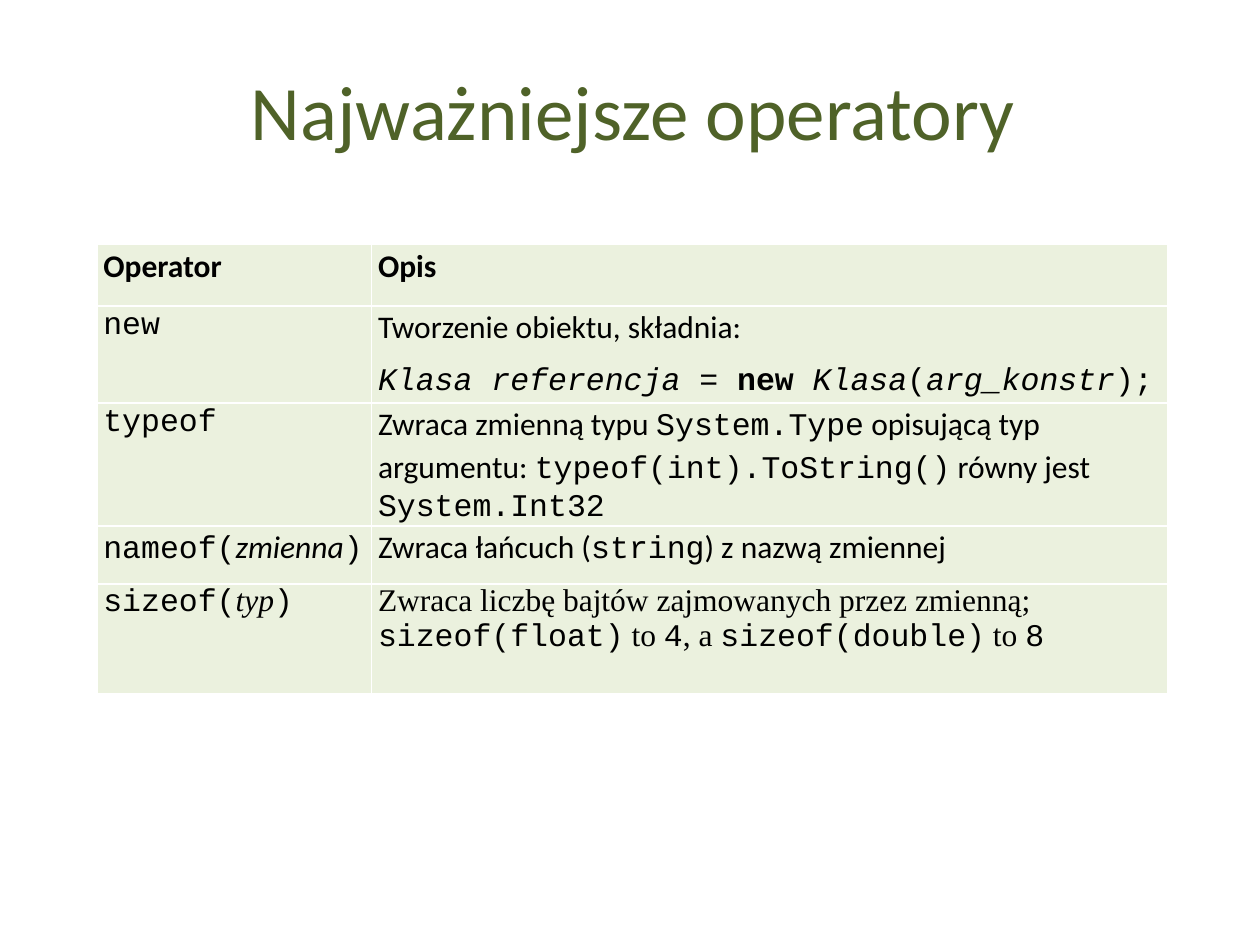
from dataclasses import dataclass

from lxml import etree
from pptx import Presentation
from pptx.dml.color import RGBColor
from pptx.enum import text
from pptx.oxml.ns import qn
from pptx.util import Inches, Pt


@dataclass(frozen=True)
class Theme:
    title: str = "4F6228"
    ink: str = "000000"
    cell: str = "EBF1DE"
    border: str = "FFFFFF"
    title_size: int = 44
    body_size: int = 18
    border_width: int = 1
    prose: str = "Calibri"
    code: str = "Courier New"
    serif: str = "Times New Roman"


THEME = Theme()
COLUMN_WIDTHS = (2.18, 6.32)
ROW_HEIGHTS = (0.49, 0.77, 0.97, 0.46, 0.87)


def prose(content, **style):
    return content, THEME.prose, style


def code(content, **style):
    return content, THEME.code, style


def serif(content, **style):
    return content, THEME.serif, style


# Rows hold cells, cells hold paragraphs, paragraphs hold runs.
OPERATORS = [
    [[[prose("Operator", bold=True)]], [[prose("Opis", bold=True)]]],
    [[[code("new")]],
     [[prose("Tworzenie obiektu, składnia:")],
      [code("Klasa referencja ", italic=True), code("= "), code("new", bold=True),
       code(" Klasa", italic=True), code("("), code("arg_konstr", italic=True),
       code(");")]]],
    [[[code("typeof")]],
     [[prose("Zwraca zmienną typu "), code("System.Type"),
       prose(" opisującą typ argumentu: "), code("typeof(int).ToString()"),
       prose(" równy jest "), code("System.Int32")]]],
    [[[code("nameof("), prose("zmienna", italic=True), code(")")]],
     [[prose("Zwraca łańcuch ("), code("string"), prose(") z nazwą zmiennej")]]],
    [[[code("sizeof("), serif("typ", italic=True), code(")")]],
     [[serif("Zwraca liczbę bajtów zajmowanych przez zmienną;\n"),
       code("sizeof(float)"), serif(" to "), code("4"), serif(", a "),
       code("sizeof(double)"), serif(" to "), code("8")]]],
]


def add_run(paragraph, content, font_name, size, color, bold=False, italic=False):
    """Add a run; a closing newline becomes a line break."""
    run = paragraph.add_run()
    run.text = content.rstrip("\n")
    font = run.font
    font.name, font.size = font_name, Pt(size)
    font.bold, font.italic = bold, italic
    font.color.rgb = RGBColor.from_string(color)
    if content.endswith("\n"):
        paragraph.add_line_break()


def add_title(slide, content):
    title = slide.shapes.title
    title.left, title.top = Inches(0.2), Inches(0.51)
    title.width, title.height = Inches(9.65), Inches(0.72)
    frame = title.text_frame
    frame.vertical_anchor = text.MSO_ANCHOR.MIDDLE
    paragraph = frame.paragraphs[0]
    paragraph.alignment = text.PP_ALIGN.CENTER
    add_run(paragraph, content, THEME.prose, THEME.title_size, THEME.title)


def set_borders(cell):
    properties = cell._tc.get_or_add_tcPr()
    for index, side in enumerate(("lnL", "lnR", "lnT", "lnB")):
        line = etree.Element(qn(f"a:{side}"), w=str(Pt(THEME.border_width)))
        fill = etree.SubElement(line, qn("a:solidFill"))
        etree.SubElement(fill, qn("a:srgbClr"), val=THEME.border)
        properties.insert(index, line)


def fill_cell(cell, paragraphs, line_spacing, space_after):
    cell.margin_left = cell.margin_right = Inches(0.05)
    cell.margin_top = cell.margin_bottom = 0
    cell.fill.solid()
    cell.fill.fore_color.rgb = RGBColor.from_string(THEME.cell)
    set_borders(cell)
    frame = cell.text_frame
    for index, runs in enumerate(paragraphs):
        paragraph = frame.add_paragraph() if index else frame.paragraphs[0]
        paragraph.line_spacing = line_spacing
        paragraph.space_after = Pt(space_after)
        for content, font_name, style in runs:
            add_run(paragraph, content, font_name, THEME.body_size, THEME.ink, **style)


def add_operator_table(slide):
    table = slide.shapes.add_table(
        len(ROW_HEIGHTS), len(COLUMN_WIDTHS), Inches(0.77), Inches(1.94),
        Inches(sum(COLUMN_WIDTHS)), Inches(sum(ROW_HEIGHTS))).table
    for column, width in zip(table.columns, COLUMN_WIDTHS):
        column.width = Inches(width)
    for row, height, contents in zip(table.rows, ROW_HEIGHTS, OPERATORS):
        row.height = Inches(height)
        is_last = contents is OPERATORS[-1]
        line_spacing, space_after = (1.0, 6) if is_last else (1.07, 8)
        for cell, paragraphs in zip(row.cells, contents):
            fill_cell(cell, paragraphs, line_spacing, space_after)


def main():
    presentation = Presentation()
    presentation.slide_width, presentation.slide_height = Inches(10), Inches(7.5)
    slide = presentation.slides.add_slide(presentation.slide_layouts[5])
    add_title(slide, "Najważniejsze operatory")
    add_operator_table(slide)
    presentation.save("out.pptx")


if __name__ == "__main__":
    main()
